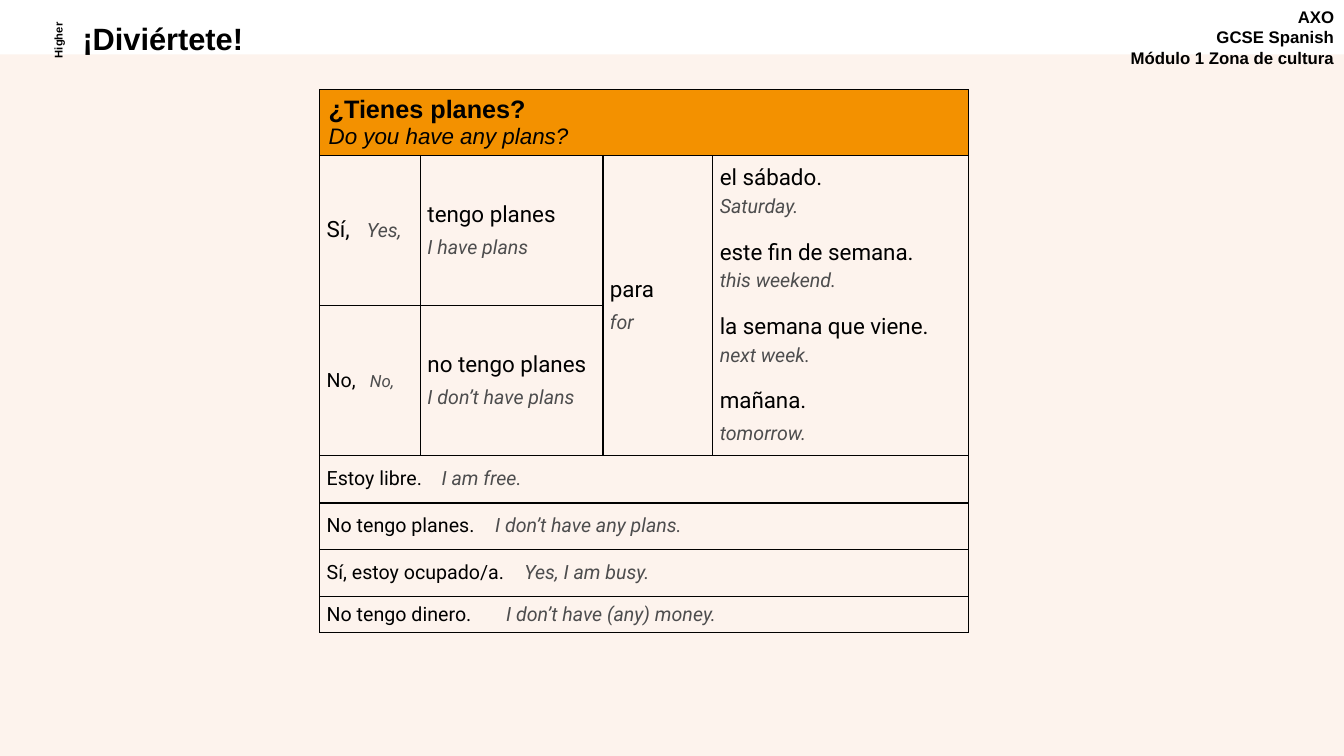
"""Build a Spanish vocabulary slide with a sentence-building table."""
import lxml.etree
import pptx
import pptx.dml.color
import pptx.enum.shapes
import pptx.enum.text
import pptx.oxml.ns
import pptx.util

ALIGN = pptx.enum.text.PP_ALIGN
MIDDLE = pptx.enum.text.MSO_ANCHOR.MIDDLE
BLACK, GREY, CREAM, ORANGE = "000000", "4D4D4E", "FDF3ED", "F39100"


def colour(value):
    return pptx.dml.color.RGBColor.from_string(value)


def write(para, text, size=14, font="Roboto", ink=BLACK, bold=False, italic=False):
    span = para.add_run()
    span.text = text
    span.font.size = pptx.util.Pt(size)
    span.font.name = font
    span.font.bold = bold
    span.font.italic = italic
    span.font.color.rgb = colour(ink)


deck = pptx.Presentation()
deck.slide_width = pptx.util.Inches(13.33)
deck.slide_height = pptx.util.Inches(7.5)
page = deck.slides.add_slide(deck.slide_layouts[6])
step = deck.slide_height // 750

backdrop = page.shapes.add_shape(
    pptx.enum.shapes.MSO_SHAPE.RECTANGLE, 0, 54 * step, deck.slide_width, 696 * step)
backdrop.shadow.inherit = False
backdrop.fill.solid()
backdrop.fill.fore_color.rgb = colour(CREAM)
backdrop.line.fill.background()

headings = [
    ((1044, 2, 289, 77), ["AXO", "GCSE Spanish", "Módulo 1 Zona de cultura"], 12, ALIGN.RIGHT, 1, 0),
    ((72, 19, 688, 43), ["¡Diviértete!"], 22, ALIGN.LEFT, 0.9, 0),
    ((18, 29, 78, 22), ["Higher"], 8, ALIGN.CENTER, 1, 270),
]
for place, lines, size, align, spacing, turn in headings:
    box = page.shapes.add_textbox(*[length * step for length in place])
    box.rotation = turn
    frame = box.text_frame
    frame.word_wrap = True
    for number, line in enumerate(lines):
        para = frame.add_paragraph() if number else frame.paragraphs[0]
        para.alignment = align
        para.line_spacing = spacing
        write(para, line, size=size, font="Arial", bold=True)

columns = [100, 181, 109, 254]
rows = [65, 149, 149, 47, 46, 47, 36]
table = page.shapes.add_table(
    len(rows), len(columns), 317 * step, 89 * step, sum(columns) * step, sum(rows) * step).table
table.first_row = table.horz_banding = False
for column, width in zip(table.columns, columns):
    column.width = width * step
for row, height in zip(table.rows, rows):
    row.height = height * step

for r in range(len(rows)):
    for c in range(len(columns)):
        cell = table.cell(r, c)
        cell.vertical_anchor = MIDDLE
        cell.margin_left = cell.margin_right = (7 if r else 9) * step
        cell.margin_top = cell.margin_bottom = (0 if r else 4) * step
        if r:
            cell.fill.background()
        else:
            cell.fill.solid()
            cell.fill.fore_color.rgb = colour(ORANGE)
        choices = r in (1, 2)
        thick = {
            "lnL": choices and c > 1,
            "lnR": choices and 0 < c < 3 or r > 2,
            "lnT": r > 3,
            "lnB": 2 < r < 6,
        }
        properties = cell._tc.get_or_add_tcPr()
        for position, (side, heavy) in enumerate(thick.items()):
            edge = lxml.etree.Element(
                pptx.oxml.ns.qn("a:" + side), w=str(pptx.util.Pt(1 if heavy else 0.75)))
            fill = lxml.etree.SubElement(edge, pptx.oxml.ns.qn("a:solidFill"))
            lxml.etree.SubElement(fill, pptx.oxml.ns.qn("a:srgbClr"), val=BLACK)
            properties.insert(position, edge)

for r in (0, 3, 4, 5, 6):
    table.cell(r, 0).merge(table.cell(r, 3))
for c in (2, 3):
    table.cell(1, c).merge(table.cell(2, c))

title = table.cell(0, 0).text_frame
write(title.paragraphs[0], "¿Tienes planes?", size=18, font="Arial", bold=True)
write(title.add_paragraph(), "Do you have any plans?", size=16, font="Arial", italic=True)

stacked = {
    (1, 1): [("tengo planes", "I have plans")],
    (2, 1): [("no tengo planes", "I don’t have plans")],
    (1, 2): [("para", "for")],
    (1, 3): [
        ("el sábado.", "Saturday."),
        ("este fin de semana.", "this weekend."),
        ("la semana que viene.", "next week."),
        ("mañana.", "tomorrow."),
    ],
}
for place, pairs in stacked.items():
    frame = table.cell(*place).text_frame
    for number, (spanish, english) in enumerate(pairs):
        last = number == len(pairs) - 1
        para = frame.add_paragraph() if number else frame.paragraphs[0]
        para.space_before = pptx.util.Pt(3 if number else 0)
        para.space_after = pptx.util.Pt(3)
        write(para, spanish, size=16)
        para = frame.add_paragraph()
        para.space_before = pptx.util.Pt(3 if last else 0)
        para.space_after = pptx.util.Pt(3 if last else 12)
        write(para, english, ink=GREY, italic=True)

side_by_side = [
    ("Sí,", 16, "Yes,", 14, 40),
    ("No,", 14, "No,", 12, 43),
    ("Estoy libre.", 14, "I am free.", 14, 114),
    ("No tengo planes.", 14, "I don’t have any plans.", 14, 167),
    ("Sí, estoy ocupado/a.", 14, "Yes, I am busy.", 14, 196),
    ("No tengo dinero.", 14, "I don’t have (any) money.", 14, 178),
]
for r, (spanish, spanish_size, english, english_size, stop) in enumerate(side_by_side, 1):
    para = table.cell(r, 0).text_frame.paragraphs[0]
    tabs = lxml.etree.SubElement(para._p.get_or_add_pPr(), pptx.oxml.ns.qn("a:tabLst"))
    lxml.etree.SubElement(tabs, pptx.oxml.ns.qn("a:tab"), pos=str(stop * step), algn="l")
    write(para, spanish + "\t", size=spanish_size)
    write(para, english, size=english_size, ink=GREY, italic=True)

deck.save("out.pptx")
